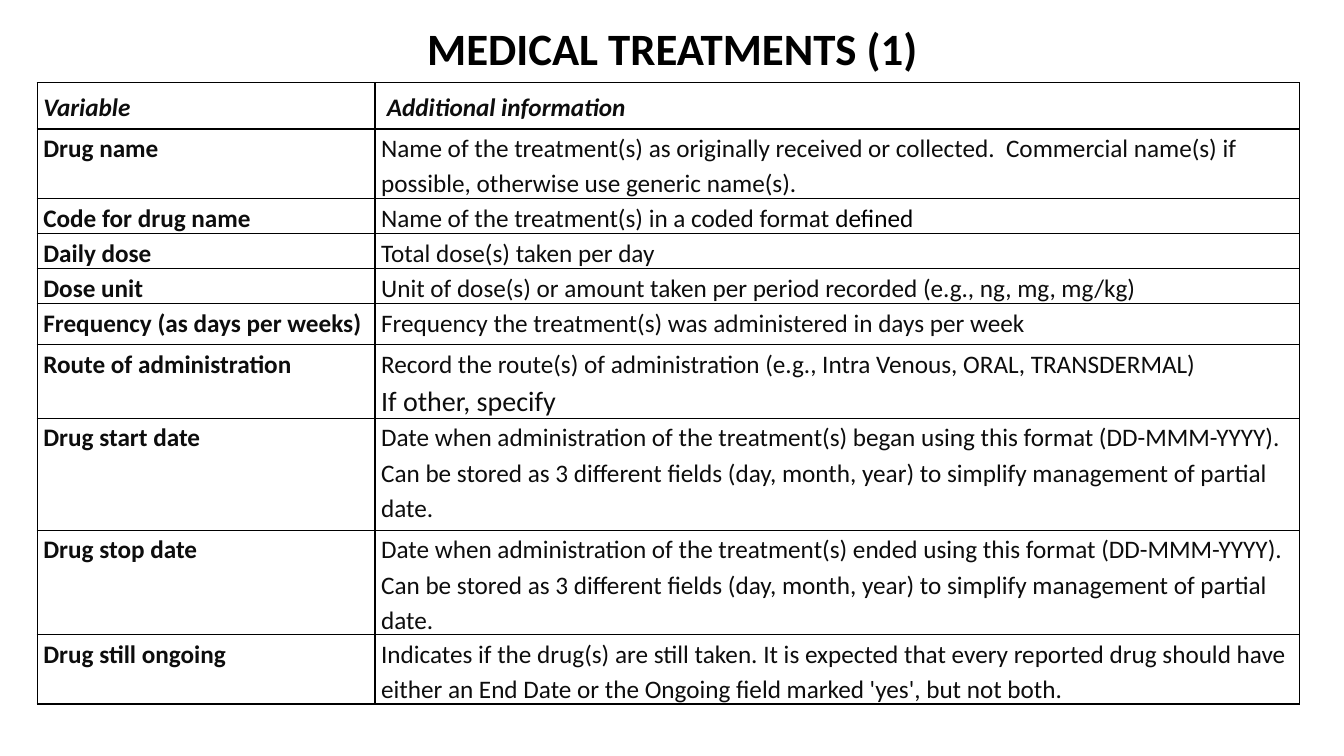
from pptx import Presentation
from pptx.dml.color import RGBColor as Rgb
from pptx.enum.text import MSO_ANCHOR as Anchor, PP_ALIGN as Align
from pptx.oxml import parse_xml
from pptx.oxml.ns import nsdecls
from pptx.util import Inches, Pt

WIDE, HIGH = Inches(13.33), Inches(7.5)
FONT = "Calibri"
INK = {"text": "0D0D0D", "black": "000000"}
COLS = [3.35, 9.17]
HEAD = ["Variable", " Additional information"]
PARTS = "Can be stored as 3 different fields (day, month, year) to simplify management of partial date."

# Row height, variable, paragraphs; a paragraph is a list of (text, format)
ROWS = [
    (0.67, "Drug name", [[("Name of the treatment(s) as originally received or collected.  "
                           "Commercial name(s) if possible, otherwise use generic name(s).", {})]]),
    (0.35, "Code for drug name", [[("Name of the treatment(s) in a coded format ", {}),
                                   ("defined", {"ink": "black"})]]),
    (0.32, "Daily dose", [[("Total dose(s) taken per day", {})]]),
    (0.32, "Dose unit", [[("Unit of dose(s) or amount taken per period recorded "
                           "(e.g., ng, mg, mg/kg)", {})]]),
    (0.41, "Frequency (as days per weeks)",
     [[("Frequency the treatment(s) was administered in days per week", {})]]),
    (0.32, "Route of administration",
     [[("Record the route(s) of administration (e.g., Intra Venous, ORAL, TRANSDERMAL)", {})],
      [("If other, specify", {"size": 20})]]),
    (1.11, "Drug start date",
     [[("Date when administration of the treatment(s) began using this format (DD-MMM-YYYY). ", {})],
      [(PARTS, {})]]),
    (1.02, "Drug stop date",
     [[("Date when administration of the treatment(s) ended using this format (DD-MMM-YYYY). ", {})],
      [(PARTS, {})]]),
    (0.67, "Drug still ongoing",
     [[("Indicates if the drug(s) are still taken. It is expected that every reported drug should "
        "have either an End Date or the Ongoing field marked 'yes', but not both.", {})]]),
]


def write(para, text, size=18, ink="text", bold=False, slant=False):
    run = para.add_run()
    run.text = text
    font = run.font
    font.name, font.size, font.bold, font.italic = FONT, Pt(size), bold, slant
    font.color.rgb = Rgb.from_string(INK[ink])


def add_title(slide, text):
    box = slide.shapes.add_textbox(Inches(2.17), Inches(0.13), Inches(9), Inches(0.69))
    frame = box.text_frame
    frame.word_wrap = True
    frame.vertical_anchor = Anchor.MIDDLE
    para = frame.paragraphs[0]
    para.alignment = Align.CENTER
    write(para, text, size=32, ink="black", bold=True)


def add_edges(cell):
    props = cell._tc.get_or_add_tcPr()
    for spot, side in enumerate(("lnL", "lnR", "lnT", "lnB")):
        props.insert(spot, parse_xml(
            f'<a:{side} {nsdecls("a")} w="12700"><a:solidFill>'
            f'<a:srgbClr val="{INK["black"]}"/></a:solidFill></a:{side}>'))


def fill_cell(cell, paras, anchor=Anchor.TOP, **style):
    cell.margin_left = cell.margin_right = Inches(0.06)
    cell.margin_top = cell.margin_bottom = 0
    cell.vertical_anchor = anchor
    cell.fill.background()
    add_edges(cell)
    frame = cell.text_frame
    for spot, runs in enumerate(paras):
        para = frame.add_paragraph() if spot else frame.paragraphs[0]
        para.line_spacing = 1.15
        for text, extra in runs:
            write(para, text, **{**style, **extra})


def add_grid(slide):
    highs = [0.46] + [row[0] for row in ROWS]
    grid = slide.shapes.add_table(len(highs), len(COLS), Inches(0.37), Inches(0.82),
                                  Inches(sum(COLS)), Inches(sum(highs))).table
    grid.horz_banding = False
    for col, wide in zip(grid.columns, COLS):
        col.width = Inches(wide)
    for row, high in zip(grid.rows, highs):
        row.height = Inches(high)

    # Header row
    for spot, text in enumerate(HEAD):
        fill_cell(grid.cell(0, spot), [[(text, {})]], Anchor.MIDDLE, bold=True, slant=True)

    # Body rows
    for spot, (_, name, paras) in enumerate(ROWS, 1):
        fill_cell(grid.cell(spot, 0), [[(name, {})]], bold=True)
        fill_cell(grid.cell(spot, 1), paras)


def main():
    deck = Presentation()
    deck.slide_width, deck.slide_height = WIDE, HIGH
    slide = deck.slides.add_slide(deck.slide_layouts[6])
    add_title(slide, "MEDICAL TREATMENTS (1)")
    add_grid(slide)
    deck.save("out.pptx")


if __name__ == "__main__":
    main()
